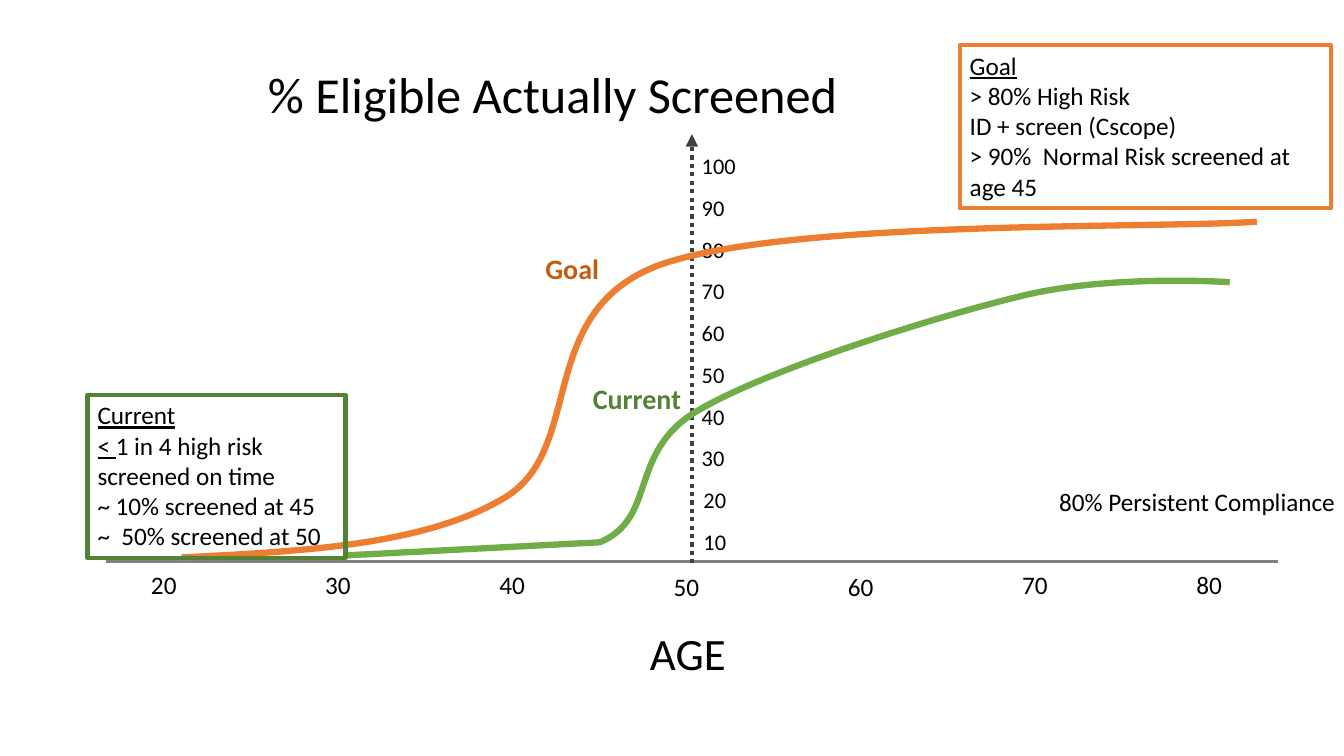
from pptx import Presentation
from pptx.dml.color import RGBColor
from pptx.enum.dml import MSO_LINE
from pptx.enum.shapes import MSO_CONNECTOR, MSO_SHAPE
from pptx.enum.text import MSO_ANCHOR, MSO_AUTO_SIZE, PP_ALIGN
from pptx.oxml.ns import qn
from pptx.util import Pt
from lxml.etree import SubElement

BLACK = RGBColor(0x00, 0x00, 0x00)
AXIS_GRAY = RGBColor(0x80, 0x80, 0x80)
ARROW_GRAY = RGBColor(0x40, 0x40, 0x40)
GOAL_ORANGE = RGBColor(0xED, 0x7D, 0x31)
GOAL_DARK = RGBColor(0xC5, 0x5A, 0x11)
CURRENT_GREEN = RGBColor(0x70, 0xAD, 0x47)
CURRENT_DARK = RGBColor(0x54, 0x82, 0x35)

# Bounds are left, top, right, bottom in points.
CURRENT_BOUNDS = (247.7, 200.2, 878.4, 396.7)
CURRENT_SEGMENTS = [
    ("moveTo", [(247.7, 396.7)]),
    ("lnTo", [(428.4, 387.4)]),
    ("cubicBezTo", [(470.2, 370.1), (447.8, 322.6), (499, 293)]),
    ("cubicBezTo", [(549.4, 263.5), (668.2, 226.1), (731.5, 211)]),
    ("cubicBezTo", [(794.9, 195.8), (878.4, 201.6), (878.4, 201.6)]),
]
GOAL_BOUNDS = (129.6, 158.4, 897.8, 398.2)
GOAL_SEGMENTS = [
    ("moveTo", [(129.6, 398.2)]),
    ("cubicBezTo", [(216.7, 393.8), (304.6, 389.5), (361.4, 355)]),
    ("cubicBezTo", [(418.3, 319.7), (381.6, 222.5), (470.9, 189.4)]),
    ("cubicBezTo", [(560.9, 157), (822.2, 163.4), (897.8, 158.4)]),
]


def set_font(run, size, color=BLACK, **formats):
    run.font.name = "Calibri"
    run.font.size = Pt(size)
    run.font.color.rgb = color
    for attribute, value in formats.items():
        setattr(run.font, attribute, value)


def add_label(slide, text, left, top, width, height, size, color=BLACK, **formats):
    label = slide.shapes.add_textbox(Pt(left), Pt(top), Pt(width), Pt(height))
    frame = label.text_frame
    frame.word_wrap = False
    frame.auto_size = MSO_AUTO_SIZE.SHAPE_TO_FIT_TEXT
    run = frame.paragraphs[0].add_run()
    run.text = text
    set_font(run, size, color, **formats)


def add_axis(slide, start, end, color, weight):
    axis = slide.shapes.add_connector(
        MSO_CONNECTOR.STRAIGHT, *(Pt(length) for length in start + end))
    axis.line.color.rgb = color
    axis.line.width = Pt(weight)
    SubElement(axis._element.spPr, qn("a:effectLst"))
    return axis


def make_dotted_arrow(axis):
    axis.line.dash_style = MSO_LINE.ROUND_DOT
    line = axis._element.spPr.find(qn("a:ln"))
    SubElement(line, qn("a:tailEnd"), type="triangle")


def add_curve(slide, bounds, segments, color):
    """Size a freeform to its bounds, then give it an outline of true curves."""
    left, top, right, bottom = bounds
    builder = slide.shapes.build_freeform(Pt(left), Pt(top))
    builder.add_line_segments([(Pt(right), Pt(bottom))], close=False)
    curve = builder.convert_to_shape()
    outline = next(curve._element.iter(qn("a:path")))
    for corner in list(outline):
        outline.remove(corner)
    for command, points in segments:
        segment = SubElement(outline, qn("a:" + command))
        for x, y in points:
            SubElement(segment, qn("a:pt"), x=str(Pt(x - left)), y=str(Pt(y - top)))
    curve.shadow.inherit = False
    curve.fill.background()
    curve.line.color.rgb = color
    curve.line.width = Pt(4.5)


def add_callout(slide, left, top, width, height, color, paragraphs):
    """Add an outlined box; each paragraph is a list of (text, underline) runs."""
    callout = slide.shapes.add_shape(
        MSO_SHAPE.RECTANGLE, Pt(left), Pt(top), Pt(width), Pt(height))
    callout.shadow.inherit = False
    callout.fill.background()
    callout.line.color.rgb = color
    callout.line.width = Pt(3)
    frame = callout.text_frame
    frame.word_wrap = True
    frame.auto_size = MSO_AUTO_SIZE.SHAPE_TO_FIT_TEXT
    frame.vertical_anchor = MSO_ANCHOR.TOP
    for index, runs in enumerate(paragraphs):
        paragraph = frame.add_paragraph() if index else frame.paragraphs[0]
        paragraph.alignment = PP_ALIGN.LEFT
        for text, underline in runs:
            run = paragraph.add_run()
            run.text = text
            set_font(run, 18, underline=underline)


def add_axes(slide):
    add_axis(slide, (75.6, 401), (913, 401), AXIS_GRAY, 2.25)
    for index in range(7):
        top = 404.6 if index in (3, 4) else 402.9
        add_label(slide, str(20 + 10 * index), 100.8 + 124.45 * index, top, 33.1, 29, 18)
    for index in range(10):
        left = 495.4 if index < 2 else 494.2
        width = 39 if index == 9 else 31
        add_label(slide, str(10 + 10 * index), left, 373.7 - 29.83 * index, width, 26.6, 16)
    make_dotted_arrow(add_axis(slide, (494.2, 402.5), (494.2, 95.8), ARROW_GRAY, 3))
    add_label(slide, "AGE", 457.2, 443.5, 69, 46, 32)


def main():
    presentation = Presentation()
    presentation.slide_width, presentation.slide_height = Pt(960), Pt(540)
    slide = presentation.slides.add_slide(presentation.slide_layouts[6])

    add_axes(slide)
    add_curve(slide, CURRENT_BOUNDS, CURRENT_SEGMENTS, CURRENT_GREEN)
    add_label(slide, "% Eligible Actually Screened", 184.3, 41.8, 425.5, 51, 36)
    add_curve(slide, GOAL_BOUNDS, GOAL_SEGMENTS, GOAL_ORANGE)

    add_callout(slide, 685.6, 32.2, 265, 116.6, GOAL_ORANGE, [
        [("Goal", True)],
        [("> 80% High Risk", False)],
        [("ID + screen (Cscope)", False)],
        [("> 90%  Normal Risk screened at age 45", False)],
    ])
    add_callout(slide, 62.6, 282, 184.3, 116.6, CURRENT_DARK, [
        [("Current", True)],
        [("< ", True), ("1 in 4 high risk screened on time", False)],
        [("~ 10% screened at 45", False)],
        [("~  50% screened at 50", False)],
    ])
    add_label(slide, "Goal", 382.5, 176.4, 53.3, 31.5, 20, GOAL_DARK, bold=True)
    add_label(slide, "Current", 416.4, 269.3, 78.5, 31.5, 20, CURRENT_DARK, bold=True)
    add_label(slide, "80% Persistent Compliance", 749.5, 343.9, 213.8, 29, 18)

    presentation.save("out.pptx")


if __name__ == "__main__":
    main()
